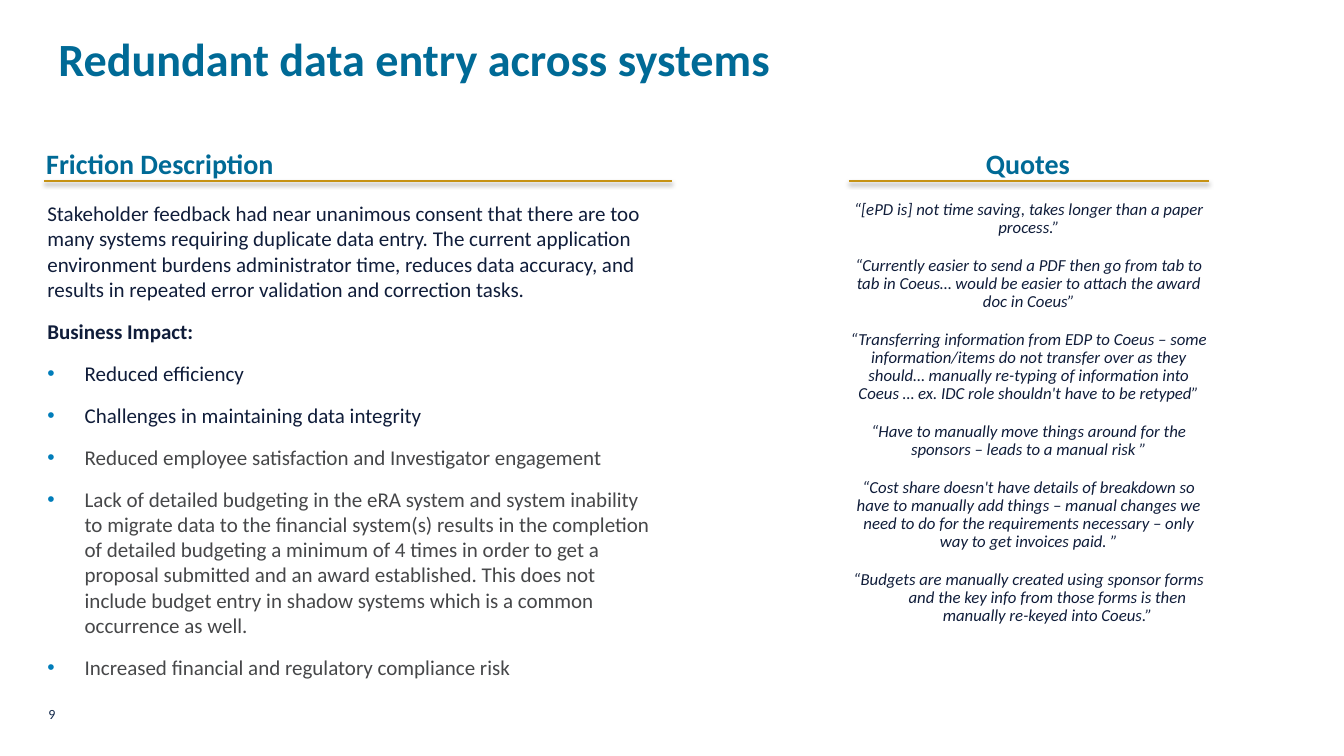
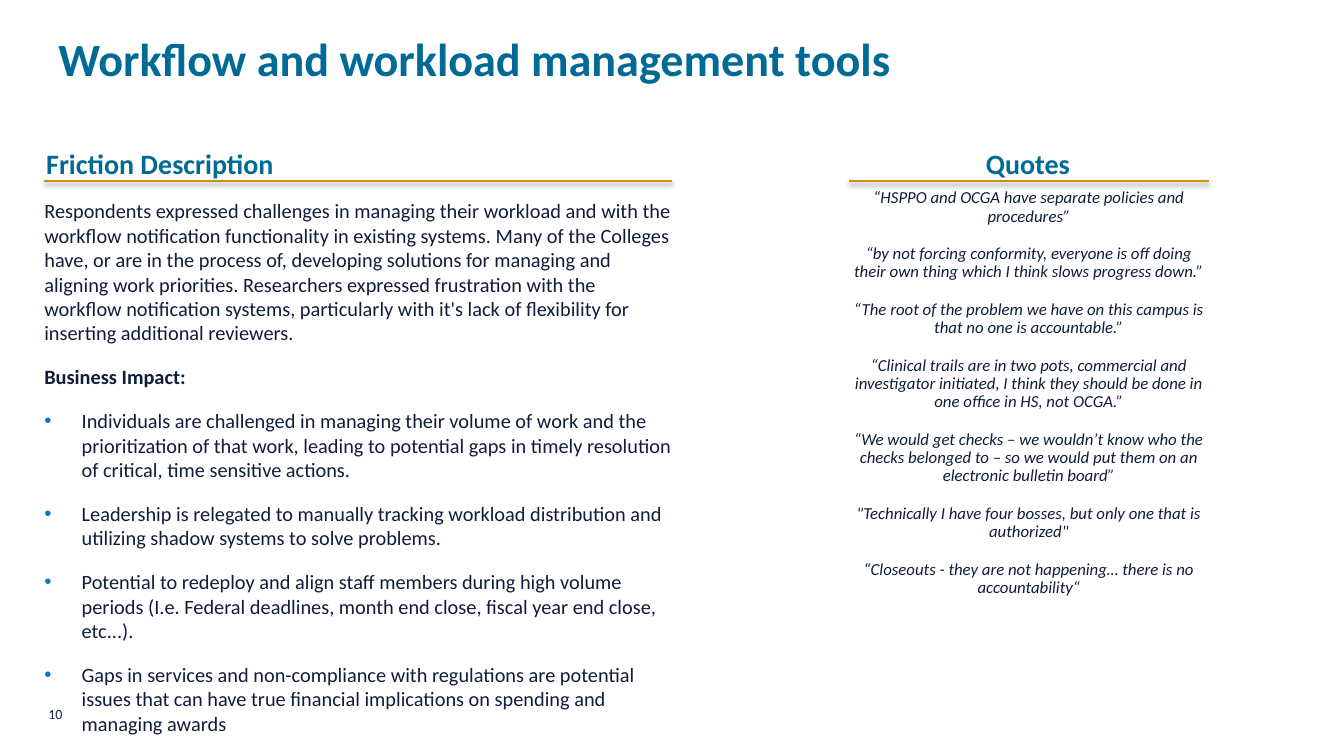
from lxml import etree
from pptx import Presentation
from pptx.dml.color import RGBColor as Rgb
from pptx.enum.shapes import MSO_CONNECTOR as Conn
from pptx.enum.text import MSO_ANCHOR as Anchor, PP_ALIGN as Align
from pptx.oxml import parse_xml
from pptx.oxml.ns import qn
from pptx.util import Inches, Pt

HUE = {"teal": "006A96", "gold": "C69214", "ink": "101D3A", "gray": "464749",
       "navy": "13294B", "dot": "007DBA"}
FONT = "Calibri"
HANG = Inches(0.37)
NS = 'xmlns:a="http://schemas.openxmlformats.org/drawingml/2006/main"'
SHADE = (f'<a:effectLst {NS}><a:outerShdw blurRad="40000" dist="20000" dir="5400000" '
         'rotWithShape="0"><a:srgbClr val="000000"><a:alpha val="38000"/></a:srgbClr>'
         '</a:outerShdw></a:effectLst>')


def put(page, text, box, size, hue="ink", bold=False, italic=False, align=Align.LEFT,
        inset=(0, 0, 0, 0), anchor=Anchor.TOP, wrap=True, before=0, after=0, lead=None):
    """Place text: a string, or a list of strings and (string, format) pairs."""
    frame = page.shapes.add_textbox(*map(Inches, box)).text_frame
    frame.word_wrap = wrap
    frame.vertical_anchor = anchor
    (frame.margin_left, frame.margin_top,
     frame.margin_right, frame.margin_bottom) = map(Inches, inset)
    for i, item in enumerate([text] if isinstance(text, str) else text):
        words, form = (item, {}) if isinstance(item, str) else item
        para = frame.paragraphs[0] if i == 0 else frame.add_paragraph()
        props = para._p.get_or_add_pPr()
        if form.get("hang") or form.get("dot"):
            props.set("marL", str(HANG))
            props.set("indent", str(-HANG))
        if form.get("dot"):
            tint = etree.SubElement(props, qn("a:buClr"))
            etree.SubElement(tint, qn("a:srgbClr"), val=HUE["dot"])
            etree.SubElement(props, qn("a:buFont"), typeface="Arial")
            etree.SubElement(props, qn("a:buChar"), char="•")
        para.alignment = align
        para.space_before = Pt(before if i else 0)
        para.space_after = Pt(after)
        if lead:
            para.line_spacing = lead
        run = para.add_run()
        run.text = words
        font = run.font
        font.name, font.size, font.italic = FONT, Pt(size), italic
        font.bold = form.get("bold", bold)
        font.color.rgb = Rgb.from_string(HUE[form.get("hue", hue)])


# Paragraph kinds
HEAD = {"bold": True}
DOT = {"dot": True}
PALE = {"dot": True, "hue": "gray"}

# Column heads: text, text box, start and end of the rule
HEADS = [
    ("Friction Description", (0.36, 1.4, 2.48, 0.44), 0.44, 6.67),
    ("Quotes", (9.68, 1.4, 1.04, 0.44), 8.42, 11.99),
]
RULE_Y = 1.8

# Slide content
PAGES = [
    {
        "title": "Redundant data entry across systems",
        "box": (0.47, 1.99, 6.07, 4.81), "size": 15, "after": 6,
        "body": [
            "Stakeholder feedback had near unanimous consent that there are too many "
            "systems requiring duplicate data entry. The current application environment "
            "burdens administrator time, reduces data accuracy, and results in repeated "
            "error validation and correction tasks.",
            ("Business Impact:", HEAD),
            ("Reduced efficiency", DOT),
            ("Challenges in maintaining data integrity", DOT),
            ("Reduced employee satisfaction and Investigator engagement", PALE),
            ("Lack of detailed budgeting in the eRA system and system inability to migrate "
             "data to the financial system(s) results in the completion of detailed "
             "budgeting a minimum of 4 times in order to get a proposal submitted and an "
             "award established. This does not include budget entry in shadow systems "
             "which is a common occurrence as well.", PALE),
            ("Increased financial and regulatory compliance risk", PALE),
        ],
        "side": (8.42, 1.99, 3.57, 4.48),
        "quotes": [
            "“[ePD is] not time saving, takes longer than a paper process.”",
            "“Currently easier to send a PDF then go from tab to tab in Coeus… would be "
            "easier to attach the award doc in Coeus”",
            "“Transferring information from EDP to Coeus – some information/items do not "
            "transfer over as they should… manually re-typing of "
            "information into Coeus … ex. IDC role shouldn't have to be retyped”",
            "“Have to manually move things around for the sponsors – leads to a manual "
            "risk ”",
            "“Cost share doesn't have details of breakdown so have to manually add things "
            "– manual changes we need to do for the requirements necessary – only way to "
            "get invoices paid. ”",
            ("“Budgets are manually created using sponsor forms and the key info from "
             "those forms is then manually re-keyed into Coeus.”", {"hang": True}),
        ],
    },
    {
        "title": "Workflow and workload management tools",
        "box": (0.44, 1.97, 6.23, 4.95), "size": 14.5, "after": 8,
        "body": [
            "Respondents expressed challenges in managing their workload and with the "
            "workflow notification functionality in existing systems. Many of the Colleges "
            "have, or are in the process of, developing solutions for managing and "
            "aligning work priorities. Researchers expressed frustration with the workflow "
            "notification systems, particularly with it's lack of flexibility for "
            "inserting additional reviewers.",
            ("Business Impact:", HEAD),
            ("Individuals are challenged in managing their volume of work and the "
             "prioritization of that work, leading to potential gaps in timely resolution "
             "of critical, time sensitive actions.", DOT),
            ("Leadership is relegated to manually tracking workload distribution and "
             "utilizing shadow systems to solve problems.", DOT),
            ("Potential to redeploy and align staff members during high volume periods "
             "(I.e. Federal deadlines, month end close, fiscal year end close, etc...).",
             DOT),
            ("Gaps in services and non-compliance with regulations are potential issues "
             "that can have true financial implications on spending and managing awards",
             DOT),
        ],
        "side": (8.42, 1.88, 3.57, 4.87),
        "quotes": [
            "“HSPPO and OCGA have separate policies and procedures”",
            "“by not forcing conformity, everyone is off doing their own thing which I "
            "think slows progress down.”",
            "“The root of the problem we have on this campus is that no one is "
            "accountable.”",
            "“Clinical trails are in two pots, commercial and investigator initiated, I "
            "think they should be done in one office in HS, not OCGA.”",
            "“We would get checks – we wouldn’t know who the checks belonged to – so we "
            "would put them on an electronic bulletin board”",
            "\"Technically I have four bosses, but only one that is authorized\"",
            "“Closeouts - they are not happening… there is no accountability“",
        ],
    },
]

deck = Presentation()
deck.slide_width, deck.slide_height = Inches(13.33), Inches(7.5)

for num, data in enumerate(PAGES, start=9):
    page = deck.slides.add_slide(deck.slide_layouts[6])

    # Title and page number
    put(page, data["title"], (0.48, 0.3, 12, 1.25), 33, "teal", bold=True,
        inset=(0.1, 0, 0.1, 0))
    put(page, str(num), (0.48, 6.88, 3, 0.4), 10, "navy",
        inset=(0, 0.05, 0.1, 0.05), anchor=Anchor.MIDDLE)

    # Column heads with gold rules
    for head, box, left, right in HEADS:
        put(page, head, box, 20, "teal", bold=True, inset=(0.1, 0.05, 0.1, 0.05),
            wrap=False)
        rule = page.shapes.add_connector(
            Conn.STRAIGHT, Inches(left), Inches(RULE_Y), Inches(right), Inches(RULE_Y))
        rule.line.color.rgb = Rgb.from_string(HUE["gold"])
        rule.line.width = Pt(1.5)
        rule._element.spPr.append(parse_xml(SHADE))

    # Description and quotes
    put(page, data["body"], data["box"], data["size"], before=6, after=data["after"])
    put(page, data["quotes"], data["side"], 12, italic=True, align=Align.CENTER,
        before=6, after=8, lead=0.9)

deck.save("out.pptx")
